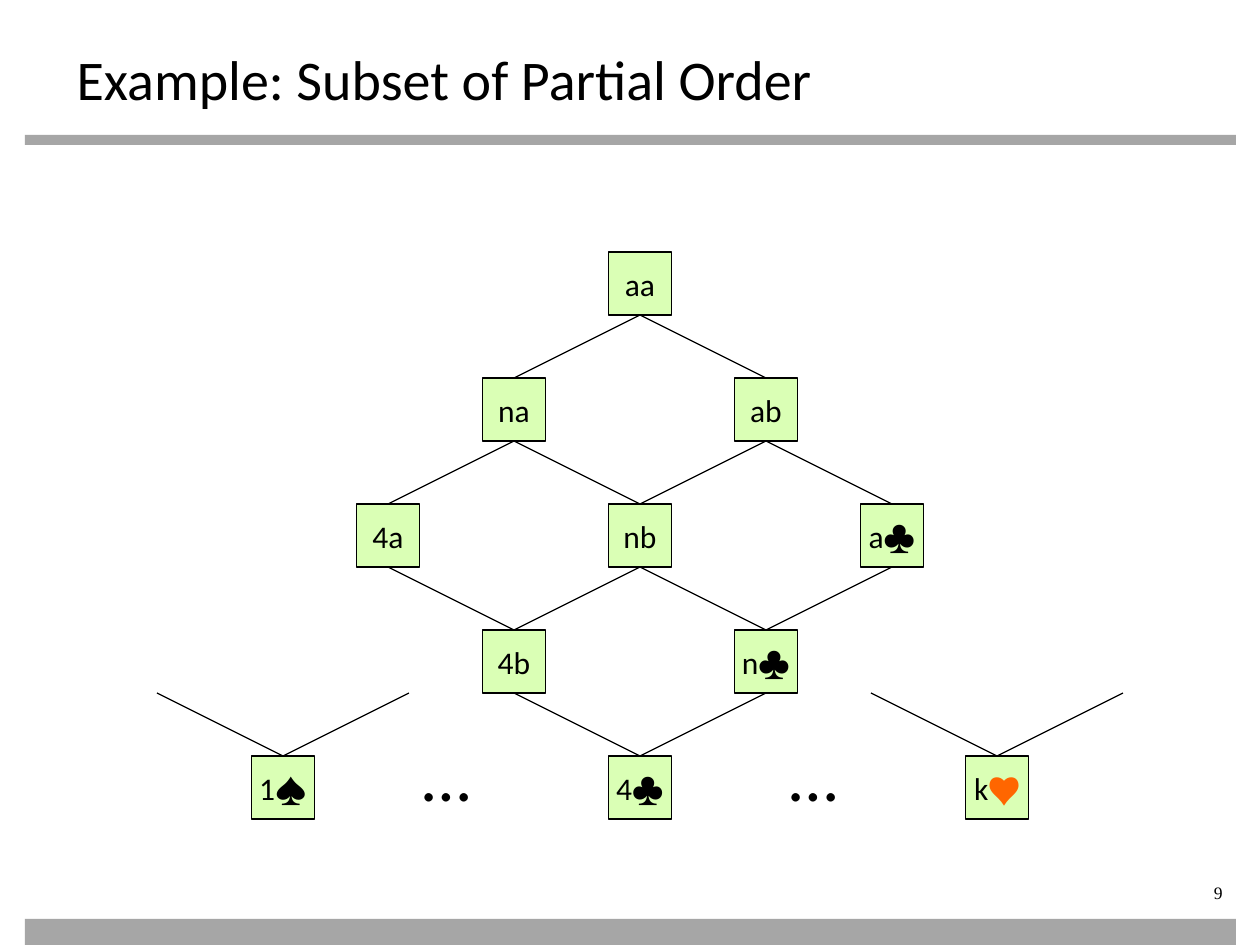
from lxml.etree import SubElement
from pptx import Presentation
from pptx.dml.color import RGBColor
from pptx.enum.shapes import MSO_CONNECTOR, MSO_SHAPE
from pptx.enum.text import MSO_ANCHOR, MSO_AUTO_SIZE, PP_ALIGN
from pptx.oxml.ns import qn
from pptx.util import Emu, Pt

BLACK = RGBColor(0x00, 0x00, 0x00)
GRAY = RGBColor(0xA6, 0xA6, 0xA6)
GREEN = RGBColor(0xDA, 0xFF, 0xB5)
ORANGE = RGBColor(0xFF, 0x66, 0x00)

TITLE = "Example: Subset of Partial Order"
BARS = [(25, 135, 1211, 10), (25, 919, 1211, 26)]
STEP, BOX, CENTER, TOP = 126, 63, 640, 252
SIDE = 357 / STEP
NODES = {
    "aa": (0, 0),
    "na": (-1, 1), "ab": (1, 1),
    "4a": (-2, 2), "nb": (0, 2), "a♣": (2, 2),
    "4b": (-1, 3), "n♣": (1, 3),
    "1♠": (-SIDE, 4), "4♣": (0, 4), "k♥": (SIDE, 4),
}
EDGES = {
    "aa": ["na", "ab"],
    "na": ["4a", "nb"], "ab": ["nb", "a♣"],
    "4a": ["4b"], "nb": ["4b", "n♣"], "a♣": ["n♣"],
    "4b": ["4♣"], "n♣": ["4♣"],
}
OPEN_ENDS = ["1♠", "k♥"]
ELLIPSES = [(410, 725, 96, 97), (777, 725, 96, 97)]
NUMBER = (1096, 882, 139, 28)

TITLE_FONT = {"name": "Calibri", "size": Pt(32), "bold": False}
NODE_FONT = {"name": "Calibri", "size": Pt(18)}
DOTS_FONT = {"name": "Calibri", "size": Pt(40)}
NUMBER_FONT = {"name": "Times New Roman", "size": Pt(10)}


def px(n):
    return Emu(round(n * 914400 / 126))


def place(*lengths):
    return [px(n) for n in lengths]


def set_attrs(obj, values):
    for name, value in values.items():
        setattr(obj, name, value)


def write(p, text, font, color=BLACK):
    r = p.add_run()
    r.text = text
    set_attrs(r.font, font)
    r.font.color.rgb = color


def add_rect(box, fill):
    sp = s.shapes.add_shape(MSO_SHAPE.RECTANGLE, *place(*box))
    sp.shadow.inherit = False
    sp.fill.solid()
    sp.fill.fore_color.rgb = fill
    sp.line.fill.background()
    return sp


def style_line(line):
    line.color.rgb = BLACK
    line.width = Pt(0.75)


def add_line(x1, y1, x2, y2):
    cn = s.shapes.add_connector(MSO_CONNECTOR.STRAIGHT, *place(x1, y1, x2, y2))
    style_line(cn.line)
    SubElement(cn._element.spPr, qn("a:effectLst"))
    return cn


def add_text(box, text, font, align, **frame):
    tf = s.shapes.add_textbox(*place(*box)).text_frame
    set_attrs(tf, frame)
    p = tf.paragraphs[0]
    p.alignment = align
    write(p, text, font)


def node_top(name):
    col, row = NODES[name]
    return CENTER + col * STEP, TOP + row * STEP


prs = Presentation()
prs.slide_width, prs.slide_height = place(1260, 945)
s = prs.slides.add_slide(prs.slide_layouts[5])

for bar in BARS:
    add_rect(bar, GRAY)

title = s.shapes.title
title.left, title.top, title.width, title.height = place(64, 35, 1134, 69)
set_attrs(title.text_frame, {
    "vertical_anchor": MSO_ANCHOR.TOP, "auto_size": MSO_AUTO_SIZE.NONE,
    "margin_top": px(9), "margin_bottom": 0,
})
p = title.text_frame.paragraphs[0]
p.alignment = PP_ALIGN.LEFT
write(p, TITLE, TITLE_FONT)

add_text(NUMBER, "9", NUMBER_FONT, PP_ALIGN.RIGHT, word_wrap=True,
         margin_left=0, margin_top=0, margin_bottom=0)

boxes = {}
for name in NODES:
    x, y = node_top(name)
    sp = boxes[name] = add_rect((x - BOX / 2, y, BOX, BOX), GREEN)
    style_line(sp.line)
    tf = sp.text_frame
    set_attrs(tf, {"word_wrap": False, "vertical_anchor": MSO_ANCHOR.MIDDLE})
    p = tf.paragraphs[0]
    p.alignment = PP_ALIGN.CENTER
    if name.endswith("♥"):
        write(p, name[0], NODE_FONT)
        write(p, name[1], NODE_FONT, ORANGE)
    else:
        write(p, name, NODE_FONT)

for upper, lowers in EDGES.items():
    x, y = node_top(upper)
    for lower in lowers:
        cn = add_line(x, y + BOX, *node_top(lower))
        cn.begin_connect(boxes[upper], 2)
        cn.end_connect(boxes[lower], 0)

for name in OPEN_ENDS:
    x, y = node_top(name)
    for side in (-1, 1):
        cn = add_line(x + side * STEP, y - STEP + BOX, x, y)
        cn.end_connect(boxes[name], 0)

for box in ELLIPSES:
    add_text(box, "…", DOTS_FONT, PP_ALIGN.LEFT, word_wrap=False,
             auto_size=MSO_AUTO_SIZE.SHAPE_TO_FIT_TEXT)

prs.save("out.pptx")
